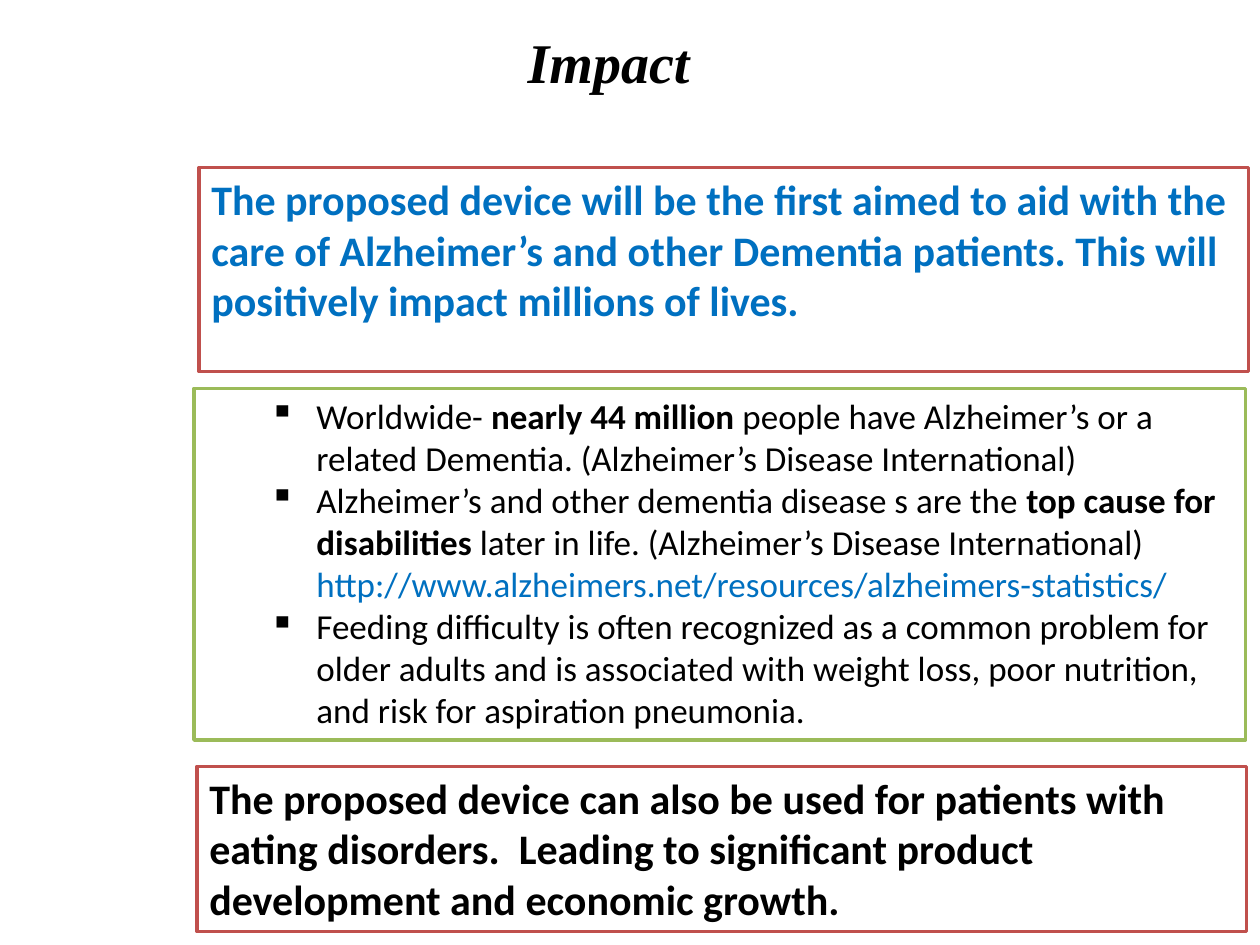
from dataclasses import dataclass

from lxml import etree
from pptx import Presentation
from pptx.dml.color import RGBColor
from pptx.enum.shapes import MSO_SHAPE
from pptx.enum.text import MSO_ANCHOR, PP_ALIGN
from pptx.oxml.ns import qn
from pptx.util import Cm, Pt

RECT = MSO_SHAPE.RECTANGLE
TOP, MIDDLE = MSO_ANCHOR.TOP, MSO_ANCHOR.MIDDLE
LEFT, CENTER = PP_ALIGN.LEFT, PP_ALIGN.CENTER
TITLE_ONLY = 5


@dataclass(frozen=True)
class Theme:
    white: str = "FFFFFF"
    black: str = "000000"
    blue: str = "0070C0"
    red: str = "C0504D"
    green: str = "9BBB59"
    head: str = "Times New Roman"
    body: str = "Calibri"
    title: int = 32
    claim: int = 24
    fact: int = 20
    edge: int = 2


class Deck:
    def __init__(self, theme):
        self.theme = theme
        self.prs = Presentation()
        self.prs.slide_width, self.prs.slide_height = Cm(25.4), Cm(19.05)
        self.slide = self.prs.slides.add_slide(
            self.prs.slide_layouts[TITLE_ONLY])

    def style(self, run, size, color, bold=False, italic=False, face=None):
        font = run.font
        font.name = face or self.theme.body
        font.size, font.bold, font.italic = Pt(size), bold, italic
        font.color.rgb = RGBColor.from_string(color)

    def title(self, text, left, top, width, height):
        t = self.theme
        shape = self.slide.shapes.title
        shape.left, shape.top = Cm(left), Cm(top)
        shape.width, shape.height = Cm(width), Cm(height)
        frame = shape.text_frame
        frame.text = text
        frame.vertical_anchor = MIDDLE
        para = frame.paragraphs[0]
        para.alignment = CENTER
        self.style(para.runs[0], t.title, t.black, True, True, t.head)

    def box(self, left, top, width, height, edge):
        shape = self.slide.shapes.add_shape(
            RECT, Cm(left), Cm(top), Cm(width), Cm(height))
        shape.shadow.inherit = False
        shape.fill.solid()
        shape.fill.fore_color.rgb = RGBColor.from_string(self.theme.white)
        shape.line.color.rgb = RGBColor.from_string(edge)
        shape.line.width = Pt(self.theme.edge)
        frame = shape.text_frame
        frame.word_wrap = True
        frame.vertical_anchor = TOP
        return frame

    def claim(self, text, color, *area):
        frame = self.box(*area, self.theme.red)
        frame.text = text
        para = frame.paragraphs[0]
        para.alignment = LEFT
        self.style(para.runs[0], self.theme.claim, color, True)

    def indent(self, para, mark):
        props = para._p.get_or_add_pPr()
        props.set("marL", str(Cm(2.22)))
        props.set("indent", str(-Cm(0.95) if mark else 0))
        if mark:
            etree.SubElement(props, qn("a:buChar")).set("char", mark)

    def facts(self, rows, *area):
        """Each row is a bullet mark, a colour and (text, bold) parts."""
        frame = self.box(*area, self.theme.green)
        for i, (mark, color, parts) in enumerate(rows):
            para = frame.add_paragraph() if i else frame.paragraphs[0]
            para.alignment = LEFT
            self.indent(para, mark)
            for text, bold in parts:
                run = para.add_run()
                run.text = text
                self.style(run, self.theme.fact, color, bold)


def main():
    theme = Theme()
    deck = Deck(theme)
    mark = "▪"

    # Heading
    deck.title("Impact", 5.92, 0.43, 12.7, 1.62)

    # Main claim
    deck.claim(
        "The proposed device will be the first aimed to aid with the care of "
        "Alzheimer’s and other Dementia patients. This will positively "
        "impact millions of lives.",
        theme.blue, 4.01, 3.38, 21.16, 4.11)

    # Supporting facts
    deck.facts([
        (mark, theme.black, [
            ("Worldwide- ", False),
            ("nearly 44 million", True),
            (" people have Alzheimer’s or a related Dementia. "
             "(Alzheimer’s Disease International)", False)]),
        (mark, theme.black, [
            ("Alzheimer’s and other dementia disease s are the ", False),
            ("top cause for disabilities ", True),
            ("later in life. (Alzheimer’s Disease International)", False)]),
        (None, theme.blue, [
            ("http://www.alzheimers.net/resources/alzheimers-statistics/",
             False)]),
        (mark, theme.black, [
            ("Feeding difficulty is often recognized as a common problem for "
             "older adults and is associated with weight loss, poor "
             "nutrition, and risk for aspiration pneumonia.", False)]),
    ], 3.91, 7.83, 21.2, 7.09)

    # Further use
    deck.claim(
        "The proposed device can also be used for patients with eating "
        "disorders.  Leading to significant product development and "
        "economic growth.",
        theme.black, 3.97, 15.45, 21.16, 3.33)

    deck.prs.save("out.pptx")


if __name__ == "__main__":
    main()
